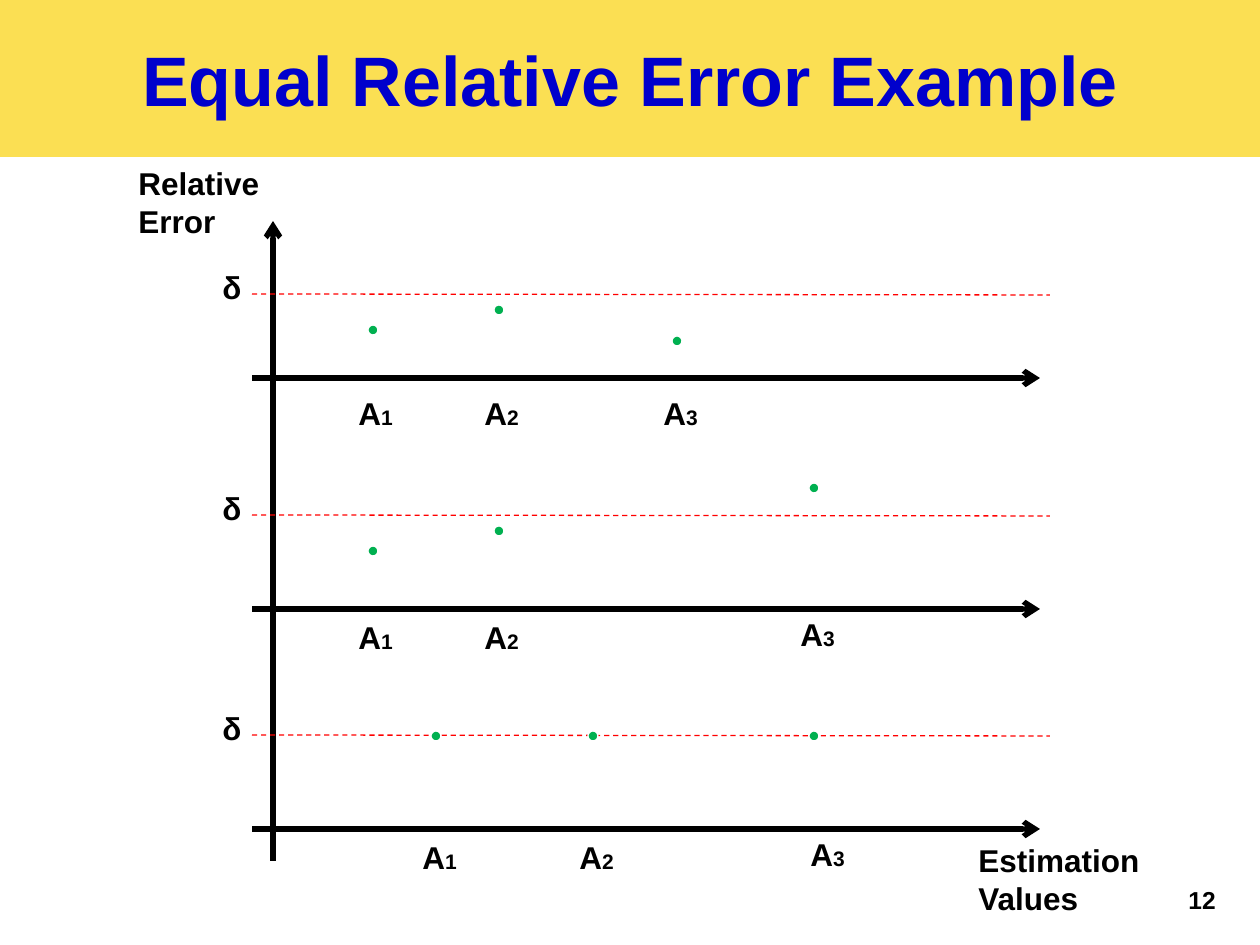
from collections import namedtuple
from dataclasses import dataclass

from lxml.etree import SubElement as Sub
from pptx import Presentation
from pptx.dml.color import RGBColor as RGB
from pptx.enum.dml import MSO_LINE_DASH_STYLE as Dash
from pptx.enum.shapes import MSO_CONNECTOR_TYPE as Conn, MSO_SHAPE as Shape
from pptx.enum.text import MSO_ANCHOR as Anchor, MSO_AUTO_SIZE as Fit, PP_ALIGN as Align
from pptx.oxml.ns import qn
from pptx.util import Emu, Pt

SCALE = 914400 / 126
Box = namedtuple("Box", "x y w h")
Mark = namedtuple("Mark", "dot label")


@dataclass(frozen=True)
class Theme:
    """Hold the colours, font and type sizes of the slide."""
    font: str = "Arial"
    ink: str = "000000"
    title: str = "0000CC"
    band: str = "FBDF53"
    limit: str = "FF0000"
    dot: str = "00B050"
    edge: str = "FFFFFF"
    head: int = 40
    body: int = 18
    page: int = 14
    sub: int = 12
    axis: float = 3
    thin: float = 0.75


THEME = Theme()


def px(*vals):
    """Turn px lengths into EMU."""
    return [Emu(round(v * SCALE)) for v in vals]


def paint(fill, color):
    """Give a fill one solid colour."""
    fill.solid()
    fill.fore_color.rgb = RGB.from_string(color)


def add_run(para, text, size, color=THEME.ink):
    """Add one bold run to a paragraph."""
    run = para.add_run()
    run.text = text
    font = run.font
    font.name, font.size, font.bold = THEME.font, Pt(size), True
    font.color.rgb = RGB.from_string(color)


def add_text(slide, box, lines, fit=Fit.SHAPE_TO_FIT_TEXT):
    """Add a text box from lines of (text, size) runs."""
    frame = slide.shapes.add_textbox(*px(*box)).text_frame
    frame.word_wrap = True
    frame.auto_size = fit
    for i, runs in enumerate(lines):
        para = frame.add_paragraph() if i else frame.paragraphs[0]
        for text, size in runs:
            add_run(para, text, size)


def add_line(slide, start, end, color, width, dash=None, arrow=False):
    """Add a straight line, dashed or with an arrowhead on request."""
    conn = slide.shapes.add_connector(Conn.STRAIGHT, *px(*start, *end))
    line = conn.line
    paint(line.fill, color)
    line.width = Pt(width)
    if dash:
        line.dash_style = dash
    props = conn.element.spPr
    if arrow:
        Sub(props.find(qn("a:ln")), qn("a:tailEnd"), type="arrow")
    Sub(props, qn("a:effectLst"))


def add_dot(slide, x, y):
    """Add one estimate dot with a thin edge."""
    dot = slide.shapes.add_shape(Shape.FLOWCHART_CONNECTOR, *px(x, y, 10, 10))
    dot.shadow.inherit = False
    paint(dot.fill, THEME.dot)
    paint(dot.line.fill, THEME.edge)
    dot.line.width = Pt(THEME.thin)


def add_title(slide, box, text):
    """Place the title as a full-width band."""
    title = slide.shapes.title
    title.left, title.top, title.width, title.height = px(*box)
    paint(title.fill, THEME.band)
    frame = title.text_frame
    frame.vertical_anchor = Anchor.MIDDLE
    para = frame.paragraphs[0]
    para.alignment = Align.CENTER
    add_run(para, text, THEME.head, THEME.title)


def add_plot(slide, box, marks):
    """Draw one value axis, its limit line, and the dots with labels."""
    x, y, w, h = box
    add_line(slide, (x, y + h), (x + w - 10, y + h), THEME.ink, THEME.axis, arrow=True)
    add_line(slide, (x, y), (x + w, y + 1), THEME.limit, THEME.thin, Dash.DASH)
    add_text(slide, (x - 42, y - 32, 53, 53), [[("δ", THEME.body)]])
    for i, mark in enumerate(marks, 1):
        (dx, dy), (lx, ly) = mark
        runs = [("A", THEME.body), (str(i), THEME.sub)]
        add_text(slide, (x + lx, y + ly, 84, 50), [runs])
        add_dot(slide, x + dx, y + dy)


def add_chart(slide, box):
    """Stack the three plots along one error axis and name both axes."""
    x, y, w, h = box
    plots = [
        (73, 84, [Mark((116, 31), (94, 94)), Mark((242, 11), (220, 94)),
                  Mark((420, 42), (399, 94))]),
        (294, 94, [Mark((116, 31), (94, 97)), Mark((242, 11), (220, 97)),
                   Mark((557, -32), (536, 94))]),
        (514, 94, [Mark((179, -4), (158, 97)), Mark((336, -4), (315, 97)),
                   Mark((557, -4), (546, 94))]),
    ]
    add_line(slide, (x + 21, y + h), (x + 21, y), THEME.ink, THEME.axis, arrow=True)
    for top, drop, marks in plots:
        add_plot(slide, Box(x, y + top, w, drop), marks)
    size = THEME.body
    add_text(slide, (x - 126, y - 63, 221, 89), [[("Relative", size)], [("Error", size)]])
    add_text(slide, (x + 714, y + 614, 221, 89), [[("Estimation Values", size)]])


def main():
    """Build and save the slide."""
    deck = Presentation()
    deck.slide_width, deck.slide_height = px(1260, 945)
    slide = deck.slides.add_slide(deck.slide_layouts[5])
    add_title(slide, Box(0, 0, 1260, 157), "Equal Relative Error Example")
    add_chart(slide, Box(252, 221, 798, 640))
    add_text(slide, Box(1176, 879, 84, 66), [[("12", THEME.page)]], Fit.NONE)
    deck.save("out.pptx")


if __name__ == "__main__":
    main()
